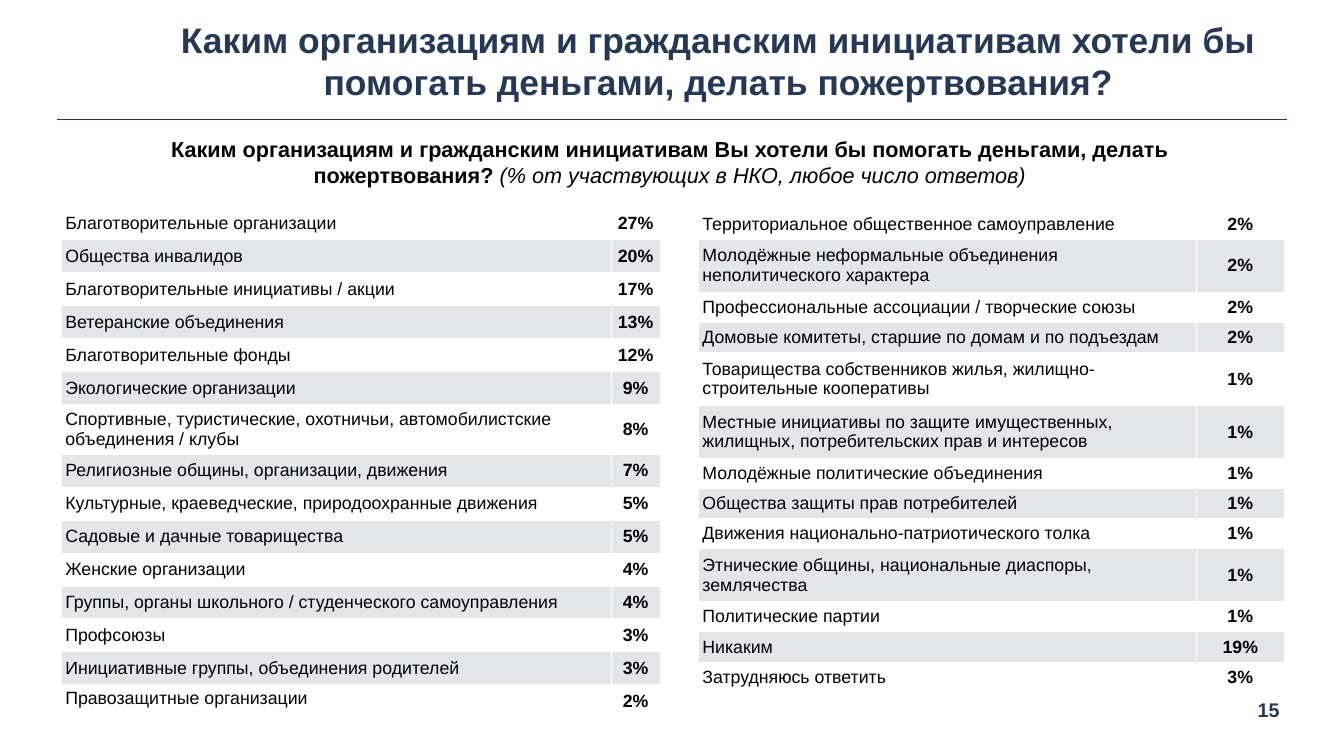
from pptx import Presentation
from pptx.dml.color import RGBColor
from pptx.enum.shapes import MSO_CONNECTOR
from pptx.enum.text import MSO_ANCHOR, MSO_AUTO_SIZE, PP_ALIGN
from pptx.oxml.ns import qn
from pptx.util import Cm, Pt
from lxml.etree import SubElement

NAVY, BLACK, WHITE, GREY = "253957", "000000", "FFFFFF", "E3E5E8"

POPULAR = [
    ("Благотворительные организации", 27),
    ("Общества инвалидов", 20),
    ("Благотворительные инициативы / акции", 17),
    ("Ветеранские объединения", 13),
    ("Благотворительные фонды", 12),
    ("Экологические организации", 9),
    ("Спортивные, туристические, охотничьи, автомобилистские объединения / клубы", 8),
    ("Религиозные общины, организации, движения", 7),
    ("Культурные, краеведческие, природоохранные движения", 5),
    ("Садовые и дачные товарищества", 5),
    ("Женские организации", 4),
    ("Группы, органы школьного / студенческого самоуправления", 4),
    ("Профсоюзы", 3),
    ("Инициативные группы, объединения родителей", 3),
    ("Правозащитные организации", 2),
]
RARE = [
    ("Территориальное общественное самоуправление", 2),
    ("Молодёжные неформальные объединения неполитического характера", 2),
    ("Профессиональные ассоциации / творческие союзы", 2),
    ("Домовые комитеты, старшие по домам и по подъездам", 2),
    ("Товарищества собственников жилья, жилищно-строительные кооперативы", 1),
    ("Местные инициативы по защите имущественных, жилищных, потребительских прав и интересов", 1),
    ("Молодёжные политические объединения", 1),
    ("Общества защиты прав потребителей", 1),
    ("Движения национально-патриотического толка", 1),
    ("Этнические общины, национальные диаспоры, землячества", 1),
    ("Политические партии", 1),
    ("Никаким", 19),
    ("Затрудняюсь ответить", 3),
]


def rgb(value):
    """Turn a hex string into a colour."""
    return RGBColor.from_string(value)


class SurveySlide:
    """Holds the slide and the style of its elements."""

    font = "Arial"
    inset = Cm(0.13)

    def __init__(self, presentation):
        """Add a title-only slide."""
        self.slide = presentation.slides.add_slide(presentation.slide_layouts[5])

    def style(self, run, size, color=BLACK, bold=False, italic=False):
        """Format one run."""
        run.font.name = self.font
        run.font.size = Pt(size)
        run.font.color.rgb = rgb(color)
        run.font.bold = bold
        run.font.italic = italic

    def title(self, text, left, top, width, height):
        """Place and format the title."""
        heading = self.slide.shapes.title
        heading.left, heading.top = Cm(left), Cm(top)
        heading.width, heading.height = Cm(width), Cm(height)
        frame = heading.text_frame
        frame.text = text
        frame.auto_size = MSO_AUTO_SIZE.NONE
        frame.vertical_anchor = MSO_ANCHOR.MIDDLE
        frame.paragraphs[0].alignment = PP_ALIGN.CENTER
        self.style(frame.paragraphs[0].runs[0], 36, NAVY, bold=True)

    def rule(self, left, right, y):
        """Draw a thin horizontal line."""
        line = self.slide.shapes.add_connector(
            MSO_CONNECTOR.STRAIGHT, Cm(left), Cm(y), Cm(right), Cm(y))
        line.line.color.rgb = rgb(NAVY)
        line.line.width = Pt(1)
        SubElement(line._element.spPr, qn("a:effectLst"))

    def text(self, parts, left, top, width, height, wrap=True):
        """Add a centred text box from (text, run style) pairs."""
        box = self.slide.shapes.add_textbox(Cm(left), Cm(top), Cm(width), Cm(height))
        frame = box.text_frame
        frame.word_wrap = wrap
        frame.margin_left = frame.margin_right = Cm(0.23)
        frame.margin_top = frame.margin_bottom = Cm(0.23)
        paragraph = frame.paragraphs[0]
        paragraph.alignment = PP_ALIGN.CENTER
        for words, look in parts:
            run = paragraph.add_run()
            run.text = words
            self.style(run, **look)

    def table(self, answers, left, top, widths, row_height, tall_height, tall_rows):
        """Add a striped table of answers and their shares."""
        heights = [tall_height if i in tall_rows else row_height
                   for i in range(len(answers))]
        grid = self.slide.shapes.add_table(
            len(answers), 2, Cm(left), Cm(top), Cm(sum(widths)), Cm(sum(heights))).table
        grid.first_row = grid.horz_banding = False
        for column, width in zip(grid.columns, widths):
            column.width = Cm(width)
        for i, (label, share) in enumerate(answers):
            grid.rows[i].height = Cm(heights[i])
            fill = GREY if i % 2 else WHITE
            self.cell(grid.cell(i, 0), label, fill, PP_ALIGN.LEFT)
            self.cell(grid.cell(i, 1), f"{share}%", fill, PP_ALIGN.CENTER, bold=True)
        return grid

    def cell(self, cell, text, fill, align, bold=False):
        """Fill and format one table cell."""
        cell.fill.solid()
        cell.fill.fore_color.rgb = rgb(fill)
        cell.vertical_anchor = MSO_ANCHOR.MIDDLE
        cell.margin_left = cell.margin_right = self.inset
        cell.margin_top = cell.margin_bottom = self.inset
        cell.text_frame.text = text
        paragraph = cell.text_frame.paragraphs[0]
        paragraph.alignment = align
        self.style(paragraph.runs[0], 18, bold=bold)


def main():
    """Build the survey slide."""
    presentation = Presentation()
    presentation.slide_width, presentation.slide_height = Cm(48.16), Cm(27.1)
    survey = SurveySlide(presentation)
    survey.rule(2.06, 46.13, 4.29)
    survey.text([("15", dict(size=20, color=NAVY, bold=True))],
                44.8, 24.8, 1.32, 1.32, wrap=False)
    survey.title("Каким организациям и гражданским инициативам хотели бы "
                 "помогать деньгами, делать пожертвования?", 5.46, 0.81, 40.56, 2.69)
    survey.text([
        ("Каким организациям и гражданским инициативам Вы хотели бы "
         "помогать деньгами, делать пожертвования? ", dict(size=22, bold=True)),
        ("(% от участвующих в НКО, любое число ответов)", dict(size=22, italic=True)),
    ], 4.06, 4.65, 39.88, 1.47)
    popular = survey.table(POPULAR, 2.21, 7.42, (19.69, 1.75), 1.18, 1.65, {6})
    popular.cell(len(POPULAR) - 1, 0).vertical_anchor = MSO_ANCHOR.TOP
    survey.table(RARE, 25.04, 7.49, (17.83, 3.15), 1.08, 1.9, {1, 4, 5, 9})
    presentation.save("out.pptx")


if __name__ == "__main__":
    main()
